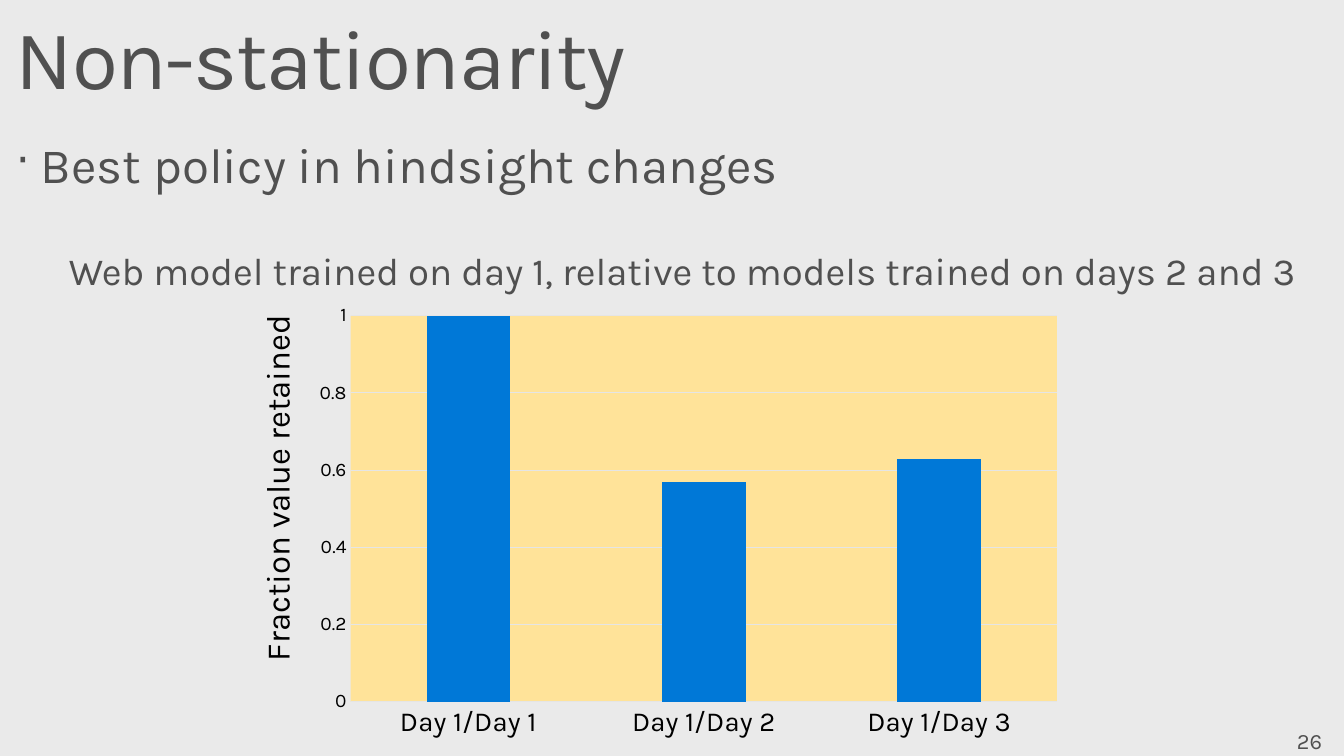
import pptx
import pptx.chart.data
import pptx.dml.color
import pptx.enum.chart
import pptx.enum.text
import pptx.oxml
import pptx.oxml.ns
import pptx.util

RGBColor = pptx.dml.color.RGBColor
Pt = pptx.util.Pt
PP_ALIGN = pptx.enum.text.PP_ALIGN

BACKGROUND = RGBColor(0xEA, 0xEA, 0xEA)
GREY = RGBColor(0x50, 0x50, 0x50)
BLACK = RGBColor(0x00, 0x00, 0x00)
GRID = RGBColor(0xE5, 0xE5, 0xE5)
PLOT = RGBColor(0xFF, 0xE3, 0x99)
BAR = RGBColor(0x00, 0x78, 0xD7)
FONT = "Karla"
PX_PER_INCH = 98.8


def px(length):
    return pptx.util.Emu(round(length * 914400 / PX_PER_INCH))


def assign(target, **values):
    for key, value in values.items():
        setattr(target, key, value)


def xml_element(tag, inner="", attributes=""):
    namespaces = pptx.oxml.ns.nsdecls("a", "c")
    return pptx.oxml.parse_xml(f"<{tag} {namespaces} {attributes}>{inner}</{tag}>")


def manual_layout(chart_box, left, top, width=None, height=None):
    """Layout element for a part given in slide px, as fractions of the chart."""
    chart_left, chart_top, chart_width, chart_height = chart_box
    values = {"xMode": "edge", "yMode": "edge",
              "x": round((left - chart_left) / chart_width, 3),
              "y": round((top - chart_top) / chart_height, 3)}
    target = ""
    if width:
        target = '<c:layoutTarget val="inner"/>'
        values.update(w=round(width / chart_width, 3), h=round(height / chart_height, 3))
    inner = "".join(f'<c:{key} val="{value}"/>' for key, value in values.items())
    return xml_element("c:layout", f"<c:manualLayout>{target}{inner}</c:manualLayout>")


class Deck:
    def __init__(self, width, height):
        self.presentation = pptx.Presentation()
        assign(self.presentation, slide_width=px(width), slide_height=px(height))
        self.slide = None

    def add_slide(self):
        layout = self.presentation.slide_layouts.get_by_name("Title Only")
        self.slide = self.presentation.slides.add_slide(layout)
        fill = self.slide.background.fill
        fill.solid()
        fill.fore_color.rgb = BACKGROUND

    def style(self, font, size, color=GREY):
        assign(font, name=FONT, size=Pt(size), bold=False)
        font.color.rgb = color

    def frame(self, shape, inset_x, inset_y, wrap=True):
        frame = shape.text_frame
        assign(frame, word_wrap=wrap, auto_size=pptx.enum.text.MSO_AUTO_SIZE.NONE,
               vertical_anchor=pptx.enum.text.MSO_ANCHOR.TOP,
               margin_left=px(inset_x), margin_right=px(inset_x),
               margin_top=px(inset_y), margin_bottom=px(inset_y))
        return frame

    def add_text(self, paragraph, text, size, align=PP_ALIGN.LEFT):
        run = paragraph.add_run()
        run.text = text
        self.style(run.font, size)
        assign(paragraph, alignment=align, line_spacing=0.9)
        return run

    def title(self, text, box, size):
        title = self.slide.shapes.title
        assign(title, **dict(zip(("left", "top", "width", "height"), map(px, box))))
        run = self.add_text(self.frame(title, 16, 10).paragraphs[0], text, size)
        run.font._element.set("spc", "-100")

    def textbox(self, box, inset_x, inset_y, wrap=True):
        return self.frame(self.slide.shapes.add_textbox(*map(px, box)), inset_x, inset_y, wrap)

    def indent(self, paragraph, left, hanging=0, bullet=None):
        properties = paragraph._p.get_or_add_pPr()
        properties.set("marL", str(px(left)))
        properties.set("indent", str(-px(hanging)))
        if bullet:
            properties.append(xml_element("a:buSzPct", attributes='val="90000"'))
            properties.append(xml_element("a:buChar", attributes=f'char="{bullet}"'))

    def column_chart(self, box, plot_box, values, axis_title, axis_title_at):
        data = pptx.chart.data.CategoryChartData()
        data.categories = list(values)
        data.add_series("Series 1", list(values.values()))
        chart = self.slide.shapes.add_chart(
            pptx.enum.chart.XL_CHART_TYPE.COLUMN_CLUSTERED, *map(px, box), data).chart
        assign(chart, has_legend=False, has_title=False)
        self.style(chart.font, 10)
        assign(chart.plots[0], gap_width=182, vary_by_categories=False)
        fill = chart.plots[0].series[0].format.fill
        fill.solid()
        fill.fore_color.rgb = BAR

        plot_area = chart._chartSpace.chart.plotArea
        for old_layout in plot_area.findall(pptx.oxml.ns.qn("c:layout")):
            plot_area.remove(old_layout)
        plot_area.insert(0, manual_layout(box, *plot_box))
        plot_area.append(xml_element(
            "c:spPr", f'<a:solidFill><a:srgbClr val="{PLOT}"/></a:solidFill>'))

        no_tick = pptx.enum.chart.XL_TICK_MARK.NONE
        for axis, size in ((chart.category_axis, 20), (chart.value_axis, 14)):
            assign(axis, major_tick_mark=no_tick, minor_tick_mark=no_tick)
            self.style(axis.tick_labels.font, size, BLACK)
        value_axis = chart.value_axis
        assign(value_axis, minimum_scale=0, maximum_scale=1, major_unit=0.2,
               has_major_gridlines=True, has_title=True)
        assign(value_axis.tick_labels, number_format="General", number_format_is_linked=False)
        value_axis.format.line.fill.background()
        for line in (chart.category_axis.format.line, value_axis.major_gridlines.format.line):
            line.width = Pt(0.75)
            line.color.rgb = GRID

        title = value_axis.axis_title
        title.text_frame.text = axis_title
        self.style(title.text_frame.paragraphs[0].runs[0].font, 24, BLACK)
        body = title.text_frame._txBody.bodyPr
        body.set("rot", "-5400000")
        body.set("vert", "horz")
        for old_layout in title._element.findall(pptx.oxml.ns.qn("c:layout")):
            title._element.remove(old_layout)
        title._element.find(pptx.oxml.ns.qn("c:tx")).addnext(manual_layout(box, *axis_title_at))


def main():
    deck = Deck(1344, 756)
    deck.add_slide()
    deck.title("Non-stationarity", (0, 7, 1284, 99), 61.2)

    body = deck.textbox((0, 131, 1339, 227), 16, 10)
    finding = body.paragraphs[0]
    deck.indent(finding, 25, 25, "·")
    deck.add_text(finding, "Best policy in hindsight changes", 36)
    caption = body.add_paragraph()
    deck.indent(caption, 25)
    deck.add_text(caption, "Web model trained on day 1, relative to models trained on days 2 and 3",
                  28, PP_ALIGN.CENTER)
    caption.space_before = Pt(42)

    deck.column_chart(
        box=(227, 295, 847, 452), plot_box=(351, 316, 706, 386),
        values={"Day 1/Day 1": 1, "Day 1/Day 2": 0.57, "Day 1/Day 3": 0.63},
        axis_title="Fraction value retained", axis_title_at=(250, 309))

    page_number = deck.textbox((1277, 715, 67, 56), 20, 16, wrap=False)
    deck.add_text(page_number.paragraphs[0], "26", 16)
    deck.presentation.save("out.pptx")


if __name__ == "__main__":
    main()
